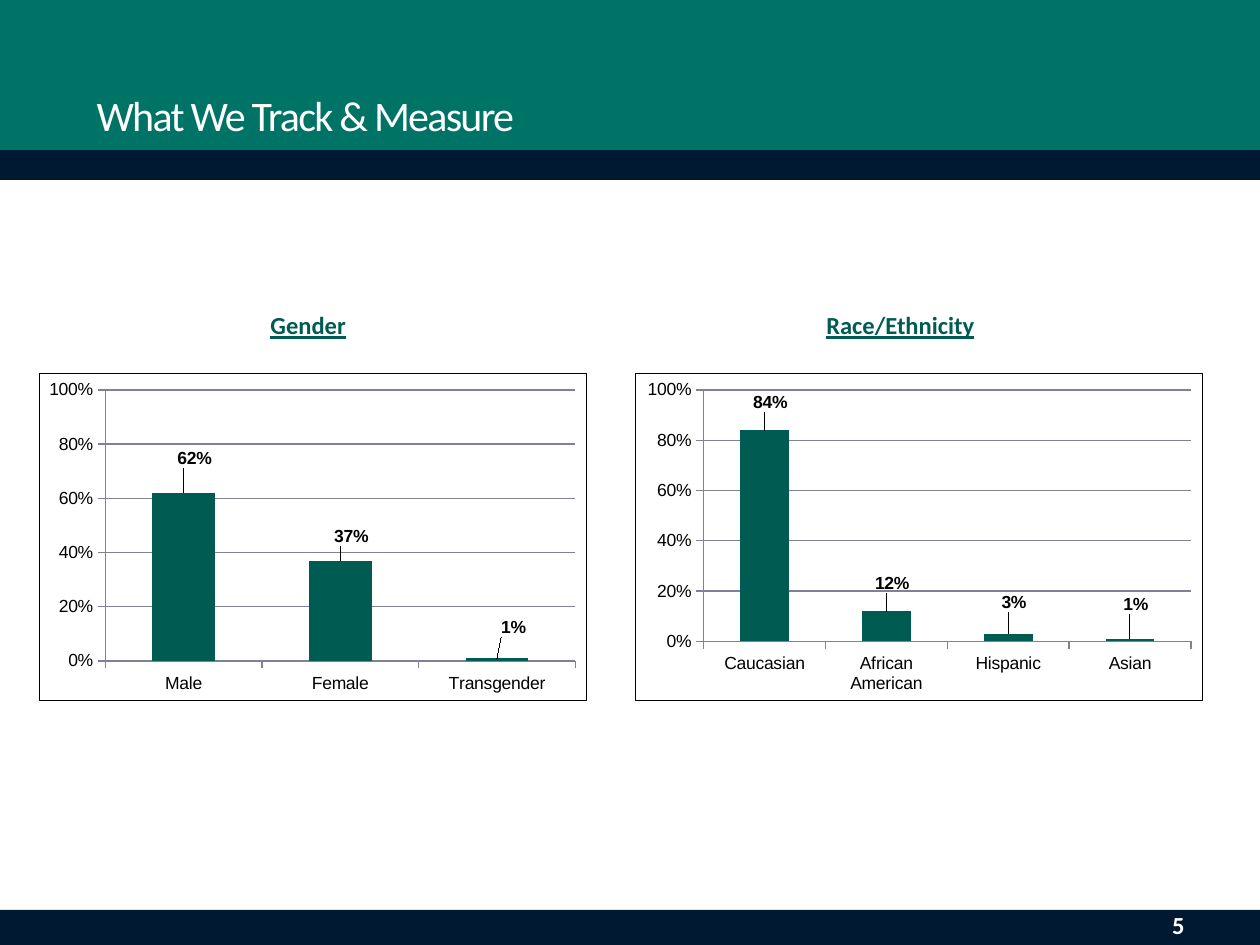
import pptx
import pptx.chart.data
import pptx.dml.color
import pptx.enum.chart
import pptx.enum.shapes
import pptx.enum.text
import pptx.oxml
import pptx.oxml.ns
import pptx.util

PX = 914400 / 126
GREEN = pptx.dml.color.RGBColor(0x00, 0x73, 0x67)
DARK_GREEN = pptx.dml.color.RGBColor(0x00, 0x5C, 0x53)
NAVY = pptx.dml.color.RGBColor(0x00, 0x19, 0x33)
GREY = pptx.dml.color.RGBColor(0x80, 0x80, 0x99)
WHITE = pptx.dml.color.RGBColor(0xFF, 0xFF, 0xFF)
BLACK = pptx.dml.color.RGBColor(0x00, 0x00, 0x00)
ALIGN = pptx.enum.text.PP_ALIGN


def px(*lengths):
    return [pptx.util.Emu(round(length * PX)) for length in lengths]


def manual_layout(target, **values):
    """Make a chart layout element; target is '' or 'inner'."""
    layout = pptx.oxml.parse_xml(
        '<c:layout xmlns:c="http://schemas.openxmlformats.org/drawingml/2006/chart">'
        "<c:manualLayout/></c:layout>")
    settings = dict(values)
    if target:
        settings = {"layoutTarget": target, "xMode": "edge", "yMode": "edge", **values}
    for name, value in settings.items():
        child = layout[0].makeelement(pptx.oxml.ns.qn("c:" + name), {"val": str(value)})
        layout[0].append(child)
    return layout


deck = pptx.Presentation()
deck.slide_width, deck.slide_height = px(1260, 945)
page = deck.slides.add_slide(deck.slide_layouts[5])

# Header and footer bands, behind the title
bands = [(0, 0, 1260, 165, GREEN), (0, 150, 1260, 30, NAVY), (0, 910, 1260, 35, NAVY)]
for order, (left, top, width, height, colour) in enumerate(bands):
    band = page.shapes.add_shape(
        pptx.enum.shapes.MSO_SHAPE.RECTANGLE, *px(left, top, width, height))
    band.shadow.inherit = False
    band.fill.solid()
    band.fill.fore_color.rgb = colour
    band.line.fill.background()
    page.shapes.element.insert(2 + order, band.element)

# Title
title = page.shapes.title
title.left, title.top, title.width, title.height = px(84, 71, 1008, 87)
title.text_frame.text = "What We Track & Measure"
title.text_frame.vertical_anchor = pptx.enum.text.MSO_ANCHOR.MIDDLE
title.text_frame.paragraphs[0].alignment = ALIGN.LEFT
span = title.text_frame.paragraphs[0].runs[0]
span.font.name = "Calibri"
span.font.size = pptx.util.Pt(24)
span.font.color.rgb = WHITE
span.font._element.set("spc", "-100")

# Chart headings and page number
labels = [
    ("Gender", 258, 301, 120, 48, ALIGN.LEFT, DARK_GREEN),
    ("Race/Ethnicity", 814, 301, 239, 48, ALIGN.LEFT, DARK_GREEN),
    ("5", 903, 905, 294, 39, ALIGN.RIGHT, WHITE),
]
for text, left, top, width, height, alignment, colour in labels:
    box = page.shapes.add_textbox(*px(left, top, width, height))
    box.text_frame.word_wrap = True
    box.text_frame.vertical_anchor = pptx.enum.text.MSO_ANCHOR.MIDDLE
    box.text_frame.text = text
    para = box.text_frame.paragraphs[0]
    para.alignment = alignment
    span = para.runs[0]
    span.font.name = "Calibri"
    span.font.size = pptx.util.Pt(14)
    span.font.bold = True
    span.font.underline = colour == DARK_GREEN
    span.font.color.rgb = colour

# Charts: left, width, plot height, then category, value and label offset
charts = [
    (39, 548, 0.83, [("Male", 0.62, 0.02, -0.06), ("Female", 0.37, 0.02, -0.03),
                     ("Transgender", 0.01, 0.03, -0.05)]),
    (635, 568, 0.77, [("Caucasian", 0.84, 0.01, -0.04), ("African American", 0.12, 0.01, -0.04),
                      ("Hispanic", 0.03, 0.01, -0.05), ("Asian", 0.01, 0.01, -0.06)]),
]
for left, width, plot_height, bars in charts:
    data = pptx.chart.data.CategoryChartData(number_format="0%")
    data.categories = [bar[0] for bar in bars]
    data.add_series("Series 1", [bar[1] for bar in bars])
    chart = page.shapes.add_chart(
        pptx.enum.chart.XL_CHART_TYPE.COLUMN_CLUSTERED, *px(left, 373, width, 328), data).chart
    chart.has_legend = False
    chart.has_title = False
    chart.font.name = "Arial"
    chart.font.size = pptx.util.Pt(10)
    chart.font.color.rgb = BLACK

    # Axes and gridlines
    for axis in (chart.category_axis, chart.value_axis):
        axis.major_tick_mark = pptx.enum.chart.XL_TICK_MARK.OUTSIDE
        axis.format.line.color.rgb = GREY
        axis.tick_labels.font.size = pptx.util.Pt(10)
        axis.tick_labels.font.color.rgb = BLACK
    scale = chart.value_axis
    scale.minimum_scale, scale.maximum_scale, scale.major_unit = 0, 1, 0.2
    scale.tick_labels.number_format = "0%"
    scale.tick_labels.number_format_is_linked = False
    scale.major_gridlines.format.line.color.rgb = GREY

    # Columns and their shifted labels
    plot = chart.plots[0]
    plot.gap_width = 150
    plot.vary_by_categories = False
    series = plot.series[0]
    series.format.fill.solid()
    series.format.fill.fore_color.rgb = DARK_GREEN
    series.data_labels.show_value = True
    series.data_labels.number_format = "0%"
    series.data_labels.number_format_is_linked = False
    series.data_labels.font.bold = True
    series.data_labels.font.color.rgb = BLACK
    for index, (_, _, shift_x, shift_y) in enumerate(bars):
        label = series.points[index].data_label
        label.font.bold = True
        label.font.size = pptx.util.Pt(10)
        label.font.color.rgb = BLACK
        label.position = pptx.enum.chart.XL_LABEL_POSITION.OUTSIDE_END
    for entry, bar in zip(chart.element.xpath(".//c:dLbl"), bars):
        entry.insert(1, manual_layout("", x=bar[2], y=bar[3]))

    # Plot position and chart border
    area = chart.element.xpath(".//c:plotArea")[0]
    for old in area.xpath("./c:layout"):
        area.remove(old)
    area.insert(0, manual_layout("inner", x=0.12, y=0.05, w=0.86, h=plot_height))
    border = pptx.oxml.parse_xml(
        '<c:spPr xmlns:c="http://schemas.openxmlformats.org/drawingml/2006/chart" '
        'xmlns:a="http://schemas.openxmlformats.org/drawingml/2006/main"><a:noFill/>'
        '<a:ln w="9525"><a:solidFill><a:srgbClr val="000000"/></a:solidFill></a:ln></c:spPr>')
    chart.element.xpath("./c:chart")[0].addnext(border)

deck.save("out.pptx")
